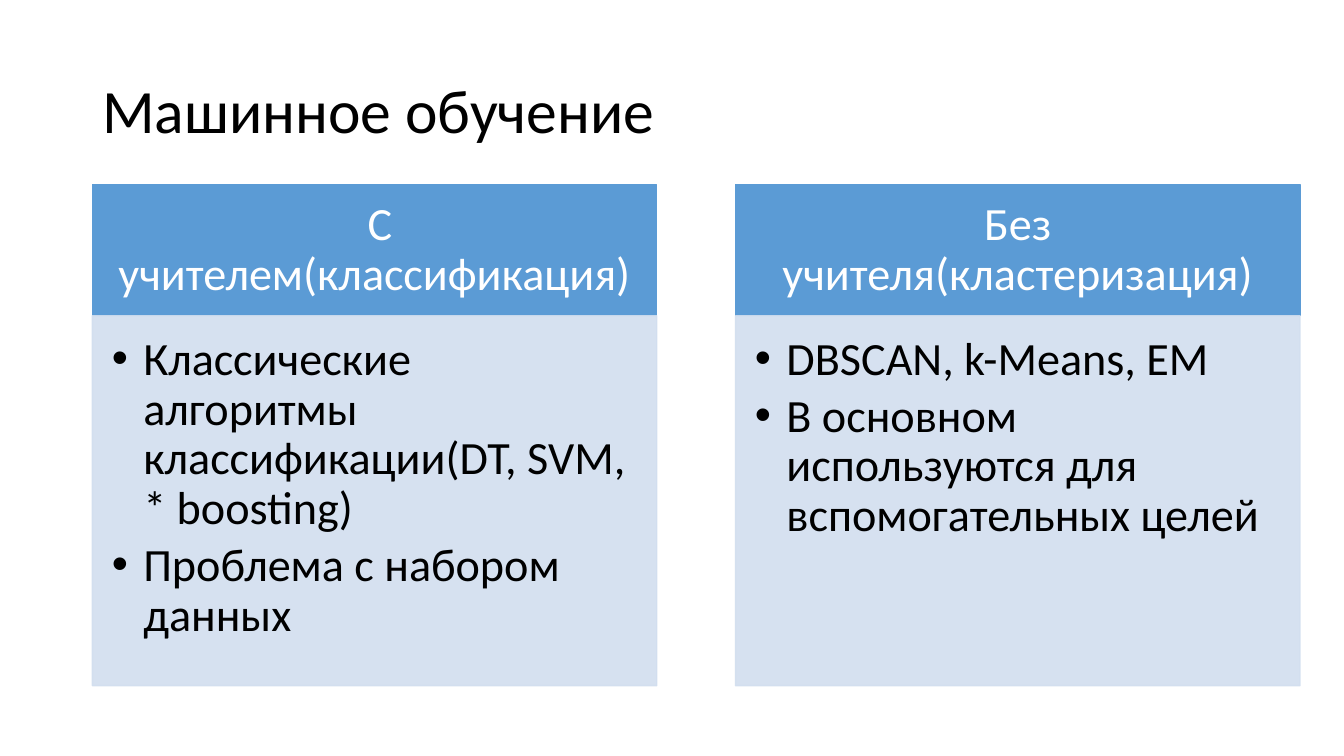
from lxml import etree
from pptx import Presentation
from pptx.dml.color import RGBColor
from pptx.enum.shapes import MSO_SHAPE
from pptx.enum.text import MSO_ANCHOR, PP_ALIGN
from pptx.oxml.ns import qn
from pptx.util import Pt

COLORS = {"header": "5B9BD5", "body": "D2DEEF", "white": "FFFFFF", "black": "000000"}
LEFT, TOP, WIDTH, PITCH = 66, 132, 403.2, 459.4
HEADER_H, BODY_H = 93.6, 264.2

columns = [
    (" С учителем(классификация)",
     ["Классические алгоритмы классификации(DT, SVM, * boosting) ",
      "Проблема с набором данных"]),
    ("Без учителя(кластеризация)",
     ["DBSCAN, k-Means, EM",
      "В основном используются для вспомогательных целей"]),
]


def write(tf, lines, size, color, anchor, align, margins):
    tf.word_wrap = True
    tf.vertical_anchor = anchor
    tf.margin_left, tf.margin_top, tf.margin_right, tf.margin_bottom = map(Pt, margins)
    tf.text = "\n".join(lines)
    for p in tf.paragraphs:
        p.alignment = align
        p.line_spacing = 0.9
        for r in p.runs:
            r.font.name = "Calibri"
            r.font.size = Pt(size)
            r.font.color.rgb = RGBColor.from_string(COLORS[color])


def add_panel(x, y, height, color):
    sp = s.shapes.add_shape(MSO_SHAPE.RECTANGLE, Pt(x), Pt(y), Pt(WIDTH), Pt(height))
    sp.shadow.inherit = False
    sp.fill.solid()
    sp.fill.fore_color.rgb = RGBColor.from_string(COLORS[color])
    sp.line.color.rgb = RGBColor.from_string(COLORS[color])
    sp.line.width = Pt(1)
    return sp


prs = Presentation()
prs.slide_width, prs.slide_height = Pt(960), Pt(540)
s = prs.slides.add_slide(prs.slide_layouts[6])

title = s.shapes.add_textbox(Pt(LEFT), Pt(28.75), Pt(828), Pt(104.4))
write(title.text_frame, ["Машинное обучение"], 44, "black",
      MSO_ANCHOR.MIDDLE, PP_ALIGN.LEFT, (7.2, 3.6, 7.2, 3.6))

for i, (heading, points) in enumerate(columns):
    x = LEFT + i * PITCH
    header = add_panel(x, TOP, HEADER_H, "header")
    write(header.text_frame, [heading], 33, "white",
          MSO_ANCHOR.MIDDLE, PP_ALIGN.CENTER, (18.5, 10.6, 18.5, 10.6))

    body = add_panel(x, TOP + HEADER_H, BODY_H, "body")
    for clr in body._element.spPr.iter(qn("a:srgbClr")):
        etree.SubElement(clr, qn("a:alpha"), val="90000")
    write(body.text_frame, points, 33, "black",
          MSO_ANCHOR.TOP, PP_ALIGN.LEFT, (13.9, 13.9, 18.5, 20.8))
    for p in body.text_frame.paragraphs:
        p.space_after = Pt(5)
        pPr = p._p.get_or_add_pPr()
        pPr.set("marL", str(Pt(22.5)))
        pPr.set("indent", str(-Pt(22.5)))
        etree.SubElement(pPr, qn("a:buFont"), typeface="Arial")
        etree.SubElement(pPr, qn("a:buChar"), char="•")

prs.save("out.pptx")
